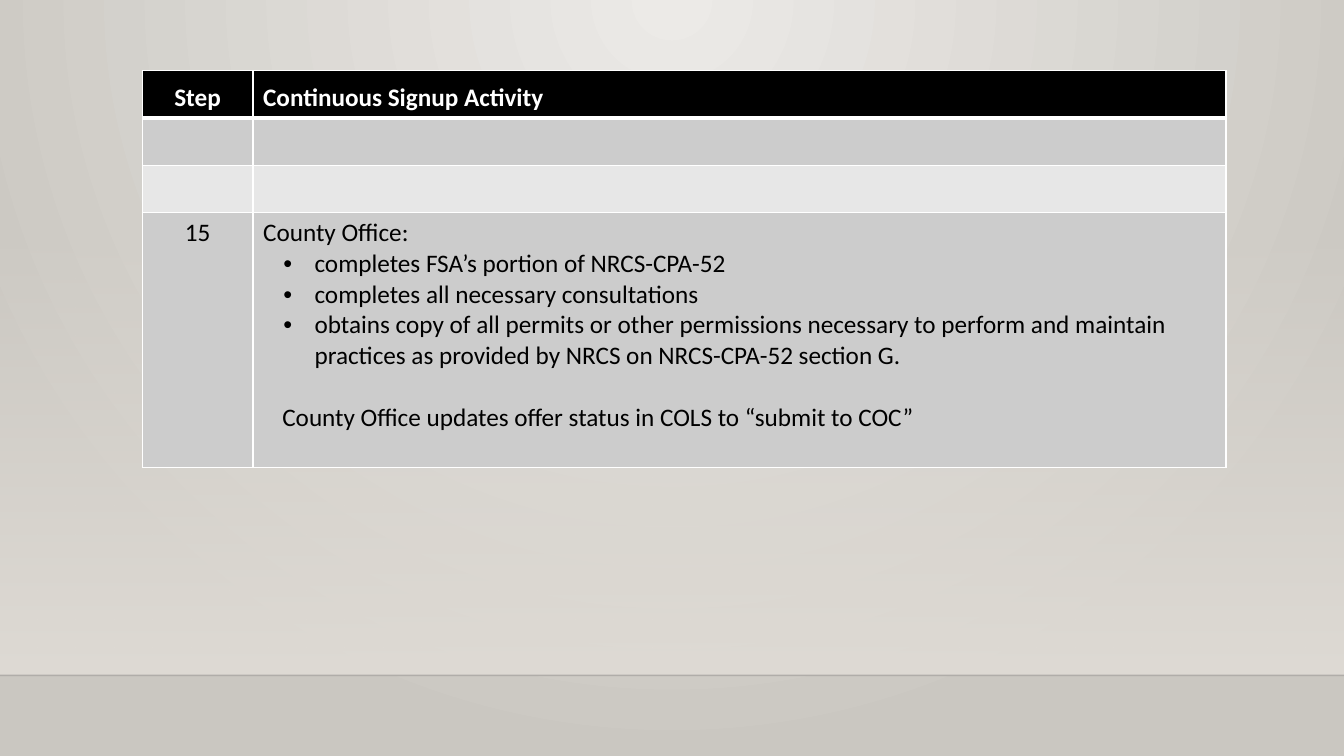
from dataclasses import dataclass

from lxml import etree
from pptx import Presentation
from pptx.dml.color import RGBColor
from pptx.enum.shapes import MSO_CONNECTOR, MSO_SHAPE
from pptx.enum.text import MSO_ANCHOR, PP_ALIGN
from pptx.oxml.ns import qn
from pptx.util import Pt

EMU_PER_PX = 9144  # 100 px to the inch
SLIDE_WIDTH, SLIDE_HEIGHT = 1333, 750
FLOOR_TOP = 670
TABLE_LEFT, TABLE_TOP = 141, 70
COLUMN_WIDTHS = (110, 965)
ROW_HEIGHTS = (47, 47, 47, 253)
ROW_FILLS = ("000000", "CCCCCC", "E7E7E7", "CCCCCC")
BORDER_TAGS = ("a:lnL", "a:lnR", "a:lnT", "a:lnB")
WHITE, BLACK = "FFFFFF", "000000"
LEFT, CENTER = PP_ALIGN.LEFT, PP_ALIGN.CENTER
TOP, BOTTOM = MSO_ANCHOR.TOP, MSO_ANCHOR.BOTTOM
RECTANGLE, STRAIGHT = MSO_SHAPE.RECTANGLE, MSO_CONNECTOR.STRAIGHT


@dataclass(frozen=True)
class Line:
    text: str
    align: PP_ALIGN = LEFT
    margin: int = 0
    indent: int = 0
    bullet: str = ""
    space_before: int = 0


def bullet_line(text: str) -> Line:
    return Line(text, margin=51, indent=-31, bullet="•")


CELL_LINES = {
    (0, 0): [Line("Step", CENTER)],
    (0, 1): [Line("Continuous Signup Activity")],
    (3, 0): [Line("15", CENTER)],
    (3, 1): [
        Line("County Office:"),
        bullet_line("completes FSA’s portion of NRCS-CPA-52"),
        bullet_line("completes all necessary consultations"),
        bullet_line("obtains copy of all permits or other permissions necessary to perform and "
                    "maintain practices as provided by NRCS on NRCS-CPA-52 section G."),
        Line("County Office updates offer status in COLS to “submit to COC”",
             indent=19, space_before=22),
    ],
}


def px(length: int) -> int:
    return length * EMU_PER_PX


def rgb(color: str) -> RGBColor:
    return RGBColor.from_string(color)


def add_element(parent, tag: str, **attributes):
    return etree.SubElement(parent, qn(tag), {key: str(value) for key, value in attributes.items()})


def set_gradient(fill, colors: tuple[str, str]):
    """Apply a two-stop gradient and return its XML element."""
    fill.gradient()
    for stop, color in zip(fill.gradient_stops, colors):
        stop.color.rgb = rgb(color)
    return fill._xPr.find(qn("a:gradFill"))


def set_alpha(element, percent: int) -> None:
    add_element(next(element.iter(qn("a:srgbClr"))), "a:alpha", val=percent * 1000)


def draw_backdrop(slide) -> None:
    """Draw the radial background, the wall fading in, and the floor edge."""
    radial = set_gradient(slide.background.fill, ("ECEAE7", "CAC7C1"))
    radial.remove(radial.find(qn("a:lin")))
    circle = add_element(radial, "a:path", path="circle")
    add_element(circle, "a:fillToRect", l=43000, t=0, r=43000, b=100000)

    wall = slide.shapes.add_shape(RECTANGLE, 0, px(221), px(SLIDE_WIDTH), px(FLOOR_TOP - 221))
    wall.shadow.inherit = False
    wall.line.fill.background()
    fade = set_gradient(wall.fill, ("DFDBD5", "DFDBD5"))
    wall.fill.gradient_angle = 270
    set_alpha(fade, 0)

    edge = slide.shapes.add_connector(STRAIGHT, 0, px(FLOOR_TOP), px(SLIDE_WIDTH), px(FLOOR_TOP))
    edge.line.width = Pt(1)
    edge.line.color.rgb = rgb("000001")
    properties = edge._element.spPr
    set_alpha(properties, 20)
    add_element(properties, "a:effectLst")


def set_borders(cell, widths: tuple[int, ...]) -> None:
    """Give the cell white borders; widths in points run left, right, top, bottom."""
    properties = cell._tc.get_or_add_tcPr()
    for tag, width in zip(BORDER_TAGS, widths):
        border = add_element(properties, tag, w=Pt(width))
        add_element(add_element(border, "a:solidFill"), "a:srgbClr", val=WHITE)


def write_line(paragraph, line: Line, font_format: dict) -> None:
    paragraph.alignment = line.align
    if line.space_before:
        paragraph.space_before = Pt(line.space_before)
    properties = paragraph._p.get_or_add_pPr()
    properties.set("marL", str(px(line.margin)))
    properties.set("indent", str(px(line.indent)))
    if line.bullet:
        add_element(properties, "a:buFont", typeface="Arial")
        add_element(properties, "a:buChar", char=line.bullet)
    run = paragraph.add_run()
    run.text = line.text
    for name, value in font_format.items():
        setattr(run.font, name, value)


def fill_cell(cell, row: int, lines: list[Line]) -> None:
    is_header = row == 0
    set_borders(cell, (1, 1, 3 if row == 1 else 1, 3 if is_header else 1))
    cell.fill.solid()
    cell.fill.fore_color.rgb = rgb(ROW_FILLS[row])
    cell.vertical_anchor = BOTTOM if is_header else TOP
    font_format = {"name": "Calibri", "size": Pt(18), "bold": is_header}
    frame = cell.text_frame
    for index, line in enumerate(lines):
        paragraph = frame.add_paragraph() if index else frame.paragraphs[0]
        write_line(paragraph, line, font_format)
        paragraph.runs[0].font.color.rgb = rgb(WHITE if is_header else BLACK)


def draw_step_table(slide) -> None:
    table = slide.shapes.add_table(
        len(ROW_HEIGHTS), len(COLUMN_WIDTHS), px(TABLE_LEFT), px(TABLE_TOP),
        px(sum(COLUMN_WIDTHS)), px(sum(ROW_HEIGHTS))).table
    table.horz_banding = False
    for column, width in zip(table.columns, COLUMN_WIDTHS):
        column.width = px(width)
    for row_index, height in enumerate(ROW_HEIGHTS):
        table.rows[row_index].height = px(height)
        for column_index in range(len(COLUMN_WIDTHS)):
            fill_cell(table.cell(row_index, column_index), row_index,
                      CELL_LINES.get((row_index, column_index), []))


def main() -> None:
    presentation = Presentation()
    presentation.slide_width = px(SLIDE_WIDTH)
    presentation.slide_height = px(SLIDE_HEIGHT)
    slide = presentation.slides.add_slide(presentation.slide_layouts[6])
    draw_backdrop(slide)
    draw_step_table(slide)
    presentation.save("out.pptx")


if __name__ == "__main__":
    main()
